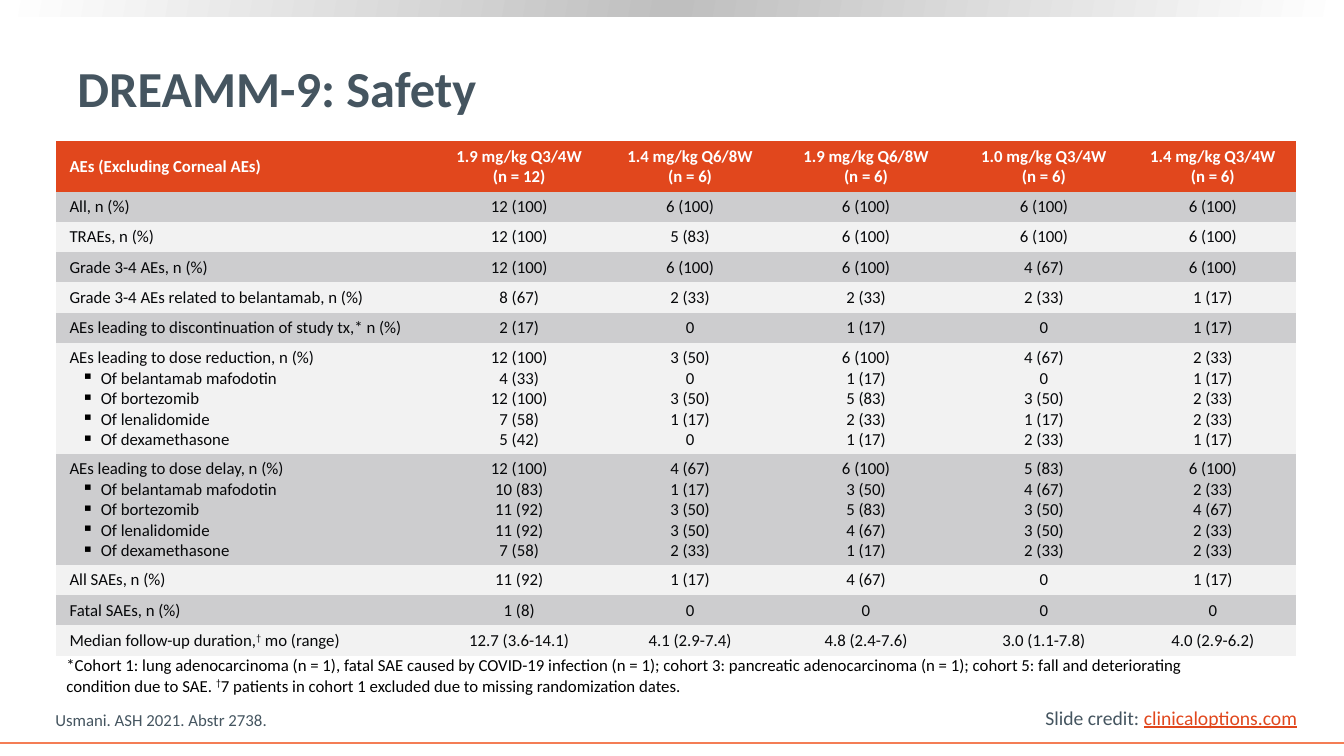
from copy import deepcopy

from lxml.etree import SubElement
from pptx import Presentation
from pptx.dml.color import RGBColor
from pptx.enum.shapes import MSO_CONNECTOR, MSO_SHAPE
from pptx.enum.text import MSO_ANCHOR, PP_ALIGN
from pptx.oxml.ns import qn
from pptx.util import Inches, Pt

SLATE, ORANGE, INK, WHITE = "455560", "E1471D", "07080A", "FFFFFF"
DARK_BAND, LIGHT_BAND = "CDCDCF", "F2F2F2"
NO_GRID_STYLE = "{2D5ABB26-0587-4C30-8999-92F81FD0307C}"
DRUGS = ["Of belantamab mafodotin", "Of bortezomib", "Of lenalidomide", "Of dexamethasone"]

COLUMN_WIDTHS = [3.72, 1.74, 1.65, 1.84, 1.69, 1.66]
HEADINGS = [
    ["AEs (Excluding Corneal AEs)"],
    ["1.9 mg/kg Q3/4W", "(n = 12)"],
    ["1.4 mg/kg Q6/8W", "(n = 6)"],
    ["1.9 mg/kg Q6/8W", "(n = 6)"],
    ["1.0 mg/kg Q3/4W", "(n = 6)"],
    ["1.4 mg/kg Q3/4W", "(n = 6)"],
]
EVENTS = [
    [["All, n (%)"], ["12 (100)"], ["6 (100)"], ["6 (100)"], ["6 (100)"], ["6 (100)"]],
    [["TRAEs, n (%)"], ["12 (100)"], ["5 (83)"], ["6 (100)"], ["6 (100)"], ["6 (100)"]],
    [["Grade 3-4 AEs, n (%)"], ["12 (100)"], ["6 (100)"], ["6 (100)"], ["4 (67)"], ["6 (100)"]],
    [["Grade 3-4 AEs related to belantamab, n (%)"],
     ["8 (67)"], ["2 (33)"], ["2 (33)"], ["2 (33)"], ["1 (17)"]],
    [["AEs leading to discontinuation of study tx,* n (%)"],
     ["2 (17)"], ["0"], ["1 (17)"], ["0"], ["1 (17)"]],
    [["AEs leading to dose reduction, n (%)", *DRUGS],
     ["12 (100)", "4 (33)", "12 (100)", "7 (58)", "5 (42)"],
     ["3 (50)", "0", "3 (50)", "1 (17)", "0"],
     ["6 (100)", "1 (17)", "5 (83)", "2 (33)", "1 (17)"],
     ["4 (67)", "0", "3 (50)", "1 (17)", "2 (33)"],
     ["2 (33)", "1 (17)", "2 (33)", "2 (33)", "1 (17)"]],
    [["AEs leading to dose delay, n (%)", *DRUGS],
     ["12 (100)", "10 (83)", "11 (92)", "11 (92)", "7 (58)"],
     ["4 (67)", "1 (17)", "3 (50)", "3 (50)", "2 (33)"],
     ["6 (100)", "3 (50)", "5 (83)", "4 (67)", "1 (17)"],
     ["5 (83)", "4 (67)", "3 (50)", "3 (50)", "2 (33)"],
     ["6 (100)", "2 (33)", "4 (67)", "2 (33)", "2 (33)"]],
    [["All SAEs, n (%)"], ["11 (92)"], ["1 (17)"], ["4 (67)"], ["0"], ["1 (17)"]],
    [["Fatal SAEs, n (%)"], ["1 (8)"], ["0"], ["0"], ["0"], ["0"]],
    [["Median follow-up duration,† mo (range)"], ["12.7 (3.6-14.1)"],
     ["4.1 (2.9-7.4)"], ["4.8 (2.4-7.6)"], ["3.0 (1.1-7.8)"], ["4.0 (2.9-6.2)"]],
]
FOOTNOTE = (
    "*Cohort 1: lung adenocarcinoma (n = 1), fatal SAE caused by COVID-19 infection (n = 1); "
    "cohort 3: pancreatic adenocarcinoma (n = 1); cohort 5: fall and deteriorating condition "
    "due to SAE. †7 patients in cohort 1 excluded due to missing randomization dates."
)


def color(value):
    return RGBColor.from_string(value)


class SlideBuilder:
    """Draws styled elements on the current slide."""

    def __init__(self, page, font_name="Calibri"):
        self.page = page
        self.font_name = font_name

    def span(self, para, text, size, tint, bold=False, underline=False):
        for piece in filter(None, text.partition("†")):
            span = para.add_run()
            span.text = piece
            span.font.name = self.font_name
            span.font.size = Pt(size)
            span.font.bold = bold
            span.font.underline = underline
            span.font.color.rgb = color(tint)
            if piece == "†":
                span.font._element.set("baseline", "30000")

    def text(self, left, top, width, height, spans, size, bold=False,
             anchor=MSO_ANCHOR.TOP, wrap=True):
        box = self.page.shapes.add_textbox(
            Inches(left), Inches(top), Inches(width), Inches(height))
        frame = box.text_frame
        frame.word_wrap = wrap
        frame.vertical_anchor = anchor
        for text, tint, underline in spans:
            self.span(frame.paragraphs[0], text, size, tint, bold, underline)

    def gradient_bar(self, left, top, width, height, edge, middle):
        bar = self.page.shapes.add_shape(
            MSO_SHAPE.RECTANGLE, Inches(left), Inches(top), Inches(width), Inches(height))
        bar.shadow.inherit = False
        bar.line.fill.background()
        bar.fill.gradient()
        bar.fill.gradient_angle = 170
        stops = bar._element.spPr.find(qn("a:gradFill")).find(qn("a:gsLst"))
        stops.insert(1, deepcopy(stops[0]))
        for stop, position, tint in zip(bar.fill.gradient_stops, (0, 0.5, 1), (edge, middle, edge)):
            stop.position = position
            stop.color.rgb = color(tint)

    def rule(self, top, width, tint, weight):
        line = self.page.shapes.add_connector(
            MSO_CONNECTOR.STRAIGHT, 0, Inches(top), Inches(width), Inches(top))
        line.line.color.rgb = color(tint)
        line.line.width = Pt(weight)
        SubElement(line._element.spPr, qn("a:effectLst"))

    def bullet(self, para):
        properties = para._p.get_or_add_pPr()
        properties.set("marL", str(Inches(0.31)))
        properties.set("indent", str(Inches(-0.19)))
        tint = SubElement(properties, qn("a:buClr"))
        SubElement(tint, qn("a:srgbClr"), val="000000")
        SubElement(properties, qn("a:buChar"), char="▪")

    def cell(self, cell, lines, fill, tint, bold, is_label):
        cell.fill.solid()
        cell.fill.fore_color.rgb = color(fill)
        cell.vertical_anchor = MSO_ANCHOR.MIDDLE
        cell.margin_left = cell.margin_right = Inches(0.13)
        cell.margin_top = cell.margin_bottom = Inches(0.05)
        for index, line in enumerate(lines):
            para = cell.text_frame.add_paragraph() if index else cell.text_frame.paragraphs[0]
            if not is_label:
                para.alignment = PP_ALIGN.CENTER
            elif index:
                self.bullet(para)
            self.span(para, line, 12, tint, bold)

    def table(self, left, top, widths, headings, body):
        rows = [headings, *body]
        heights = [0.1 + 0.2 * max(map(len, row)) for row in rows]
        table = self.page.shapes.add_table(
            len(rows), len(widths), Inches(left), Inches(top),
            Inches(sum(widths)), Inches(sum(heights))).table
        table.first_row = table.horz_banding = False
        table._tbl.tblPr.find(qn("a:tableStyleId")).text = NO_GRID_STYLE
        for column, width in zip(table.columns, widths):
            column.width = Inches(width)
        for row_index, (row, height) in enumerate(zip(rows, heights)):
            table.rows[row_index].height = Inches(height)
            is_heading = row_index == 0
            band = DARK_BAND if row_index % 2 else LIGHT_BAND
            for column_index, lines in enumerate(row):
                self.cell(table.cell(row_index, column_index), lines,
                          ORANGE if is_heading else band,
                          WHITE if is_heading else INK, is_heading, column_index == 0)


def main():
    deck = Presentation()
    deck.slide_width, deck.slide_height = Inches(13.33), Inches(7.5)
    builder = SlideBuilder(deck.slides.add_slide(deck.slide_layouts[6]))
    builder.rule(7.37, 13.33, "F47D55", 1.5)
    builder.gradient_bar(0, 0, 13.33, 0.16, WHITE, "BFBFBF")
    builder.text(0.67, 0.26, 11.89, 1.21, [("DREAMM-9: Safety", SLATE, False)], 36,
                 bold=True, anchor=MSO_ANCHOR.MIDDLE)
    builder.text(10.27, 6.95, 2.72, 0.34,
                 [("Slide credit: ", SLATE, False), ("clinicaloptions.com", ORANGE, True)],
                 14, wrap=False)
    builder.text(0.45, 6.99, 8.59, 0.3, [("Usmani. ASH 2021. Abstr 2738.", SLATE, False)], 12,
                 anchor=MSO_ANCHOR.BOTTOM)
    builder.table(0.56, 1.4, COLUMN_WIDTHS, HEADINGS, EVENTS)
    builder.text(0.56, 6.45, 11.42, 0.5, [(FOOTNOTE, "000000", False)], 12)
    deck.save("out.pptx")


if __name__ == "__main__":
    main()
